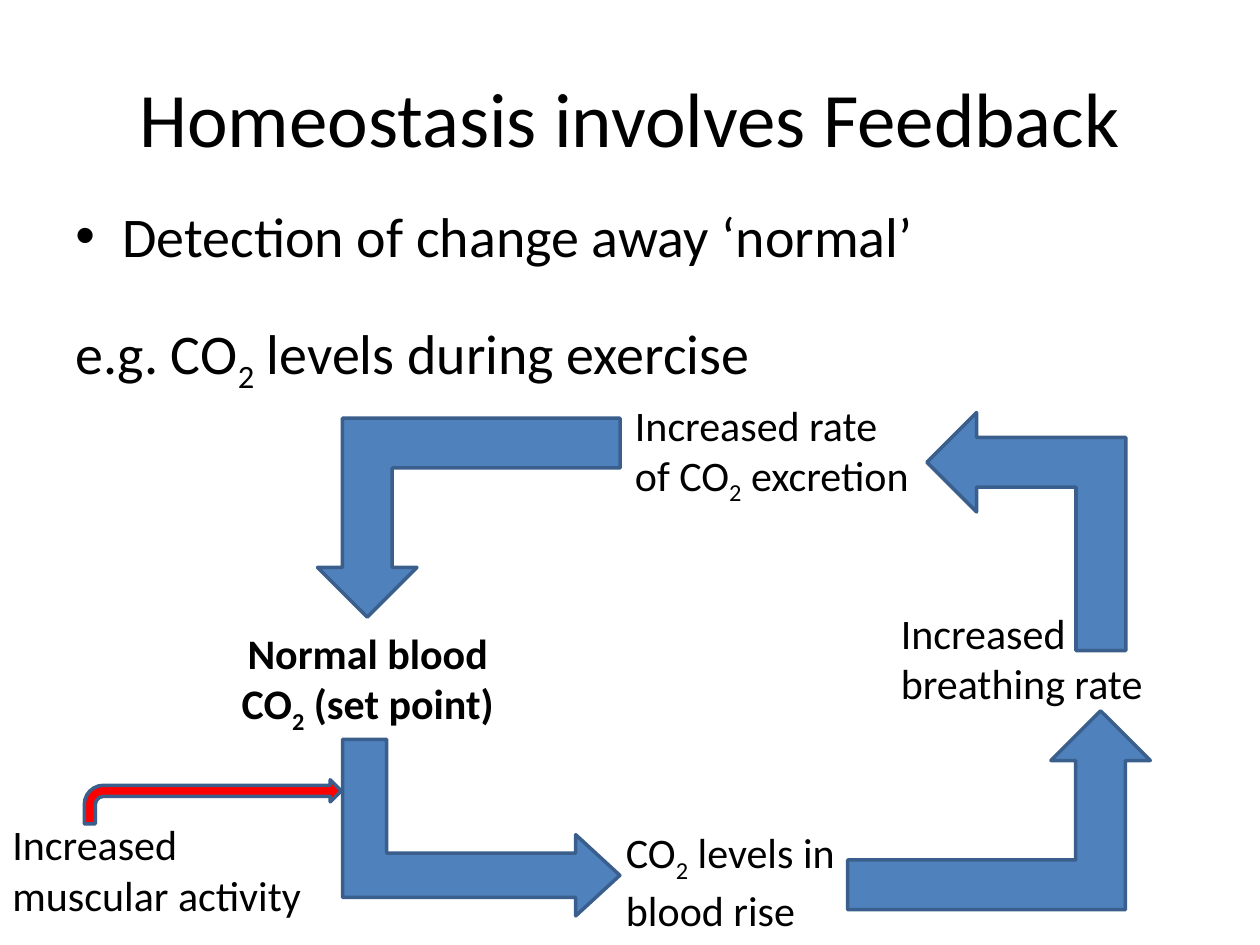
from dataclasses import dataclass

from lxml import etree
from pptx import Presentation
from pptx import util as u
from pptx.dml.color import RGBColor
from pptx.enum import shapes, text
from pptx.oxml import ns


@dataclass(frozen=True)
class Theme:
    """Colours, typeface and type sizes of the slide."""
    ink: RGBColor = RGBColor.from_string("000000")
    cycle: RGBColor = RGBColor.from_string("4F81BD")
    stimulus: RGBColor = RGBColor.from_string("FF0000")
    outline: RGBColor = RGBColor.from_string("3A5F8C")
    face: str = "Calibri"
    heading: int = 44
    body: int = 32
    label: int = 24
    line: int = 2


THEME = Theme()
SUBSCRIPT = "₂"
LABEL_HEIGHT = 2.31
BENT_UP = shapes.MSO_SHAPE.BENT_UP_ARROW
BENT = shapes.MSO_SHAPE.BENT_ARROW
LEFT, CENTER = text.PP_ALIGN.LEFT, text.PP_ALIGN.CENTER

LABELS = [
    ("Increased rate of CO₂ excretion", (12.55, 0, 6.15), LEFT, False),
    ("Increased breathing rate", (17.91, 4.2, 6.81), LEFT, False),
    ("Normal blood CO₂ (set point)", (4.34, 4.6, 6.15), CENTER, True),
    ("CO₂ levels in blood rise", (12.37, 8.62, 4.93), LEFT, False),
    ("Increased muscular activity", (0, 8.46, 7.14), LEFT, False),
]
ARROWS = [
    (BENT, (1.7, 7.8, 5.18, 0.89), 0, THEME.stimulus, ()),
    (BENT_UP, (18.29, 0.79, 4.8, 4.01), 270, THEME.cycle, ()),
    (BENT_UP, (6.4, 0.51, 6.1, 4.01), 180, THEME.cycle, ()),
    (BENT_UP, (17.09, 6.41, 6.1, 4.01), 0, THEME.cycle, ()),
    (BENT_UP, (7.92, 5.97, 3.56, 5.59), 90, THEME.cycle, (0.25, 0.23, 0.25)),
]


def apply(target, formats):
    """Set each attribute of the target from a dict of values."""
    for name, value in formats.items():
        setattr(target, name, value)


def write(paragraph, wording, size, bold=False, **formats):
    """Fill a paragraph, lowering the digit marked as a subscript."""
    apply(paragraph, formats)
    before, mark, after = wording.partition(SUBSCRIPT)
    for part, lowered in ((before, False), ("2" if mark else "", True), (after, False)):
        if part:
            run = paragraph.add_run()
            run.text = part
            apply(run.font, {"name": THEME.face, "size": u.Pt(size), "bold": bold})
            run.font.color.rgb = THEME.ink
            if lowered:
                run.font._element.set("baseline", "-25000")


def add_bullet(paragraph, indent):
    """Give a paragraph a round bullet and a hanging indent."""
    properties = paragraph._p.get_or_add_pPr()
    properties.set("marL", str(indent))
    properties.set("indent", str(-indent))
    etree.SubElement(properties, ns.qn("a:buFont")).set("typeface", "Arial")
    etree.SubElement(properties, ns.qn("a:buChar")).set("char", "•")


def place_title(slide, box):
    """Move and fill the title placeholder."""
    title = slide.shapes.title
    apply(title, dict(zip(("left", "top", "width", "height"), map(u.Cm, box))))
    title.text_frame.vertical_anchor = text.MSO_ANCHOR.MIDDLE
    write(title.text_frame.paragraphs[0], "Homeostasis involves Feedback",
          THEME.heading, alignment=CENTER)


def place_body(slide, box):
    """Place the bulleted statement and its example."""
    frame = slide.shapes.add_textbox(*map(u.Cm, box)).text_frame
    frame.word_wrap = True
    spacing = {"space_before": u.Pt(THEME.body * 0.2)}
    statement, example = frame.paragraphs[0], frame.add_paragraph()
    write(statement, "Detection of change away ‘normal’", THEME.body, **spacing)
    add_bullet(statement, u.Cm(0.95))
    write(example, "e.g. CO₂ levels during exercise", THEME.body,
          line_spacing=1.5, **spacing)


def place_cycle(slide, left, top):
    """Place the feedback labels and the arrows between them."""
    for wording, (x, y, width), alignment, bold in LABELS:
        label = slide.shapes.add_textbox(
            *map(u.Cm, (left + x, top + y, width, LABEL_HEIGHT)))
        apply(label.text_frame, {"word_wrap": True,
                                 "auto_size": text.MSO_AUTO_SIZE.SHAPE_TO_FIT_TEXT})
        write(label.text_frame.paragraphs[0], wording, THEME.label, bold,
              alignment=alignment)
    for kind, (x, y, width, height), rotation, colour, bends in ARROWS:
        arrow = slide.shapes.add_shape(
            kind, *map(u.Cm, (left + x, top + y, width, height)))
        arrow.rotation = rotation
        arrow.shadow.inherit = False
        arrow.fill.solid()
        arrow.fill.fore_color.rgb = colour
        arrow.line.color.rgb = THEME.outline
        arrow.line.width = u.Pt(THEME.line)
        for index, bend in enumerate(bends):
            arrow.adjustments[index] = bend


def main():
    """Build and save the slide."""
    deck = Presentation()
    apply(deck, {"slide_width": u.Cm(25.4), "slide_height": u.Cm(19.05)})
    slide = deck.slides.add_slide(deck.slide_layouts.get_by_name("Title Only"))
    place_title(slide, (1.27, 0.76, 22.86, 3.18))
    place_body(slide, (1.27, 3.94, 22.86, 13.08))
    place_cycle(slide, 0, 7.92)
    deck.save("out.pptx")


if __name__ == "__main__":
    main()
